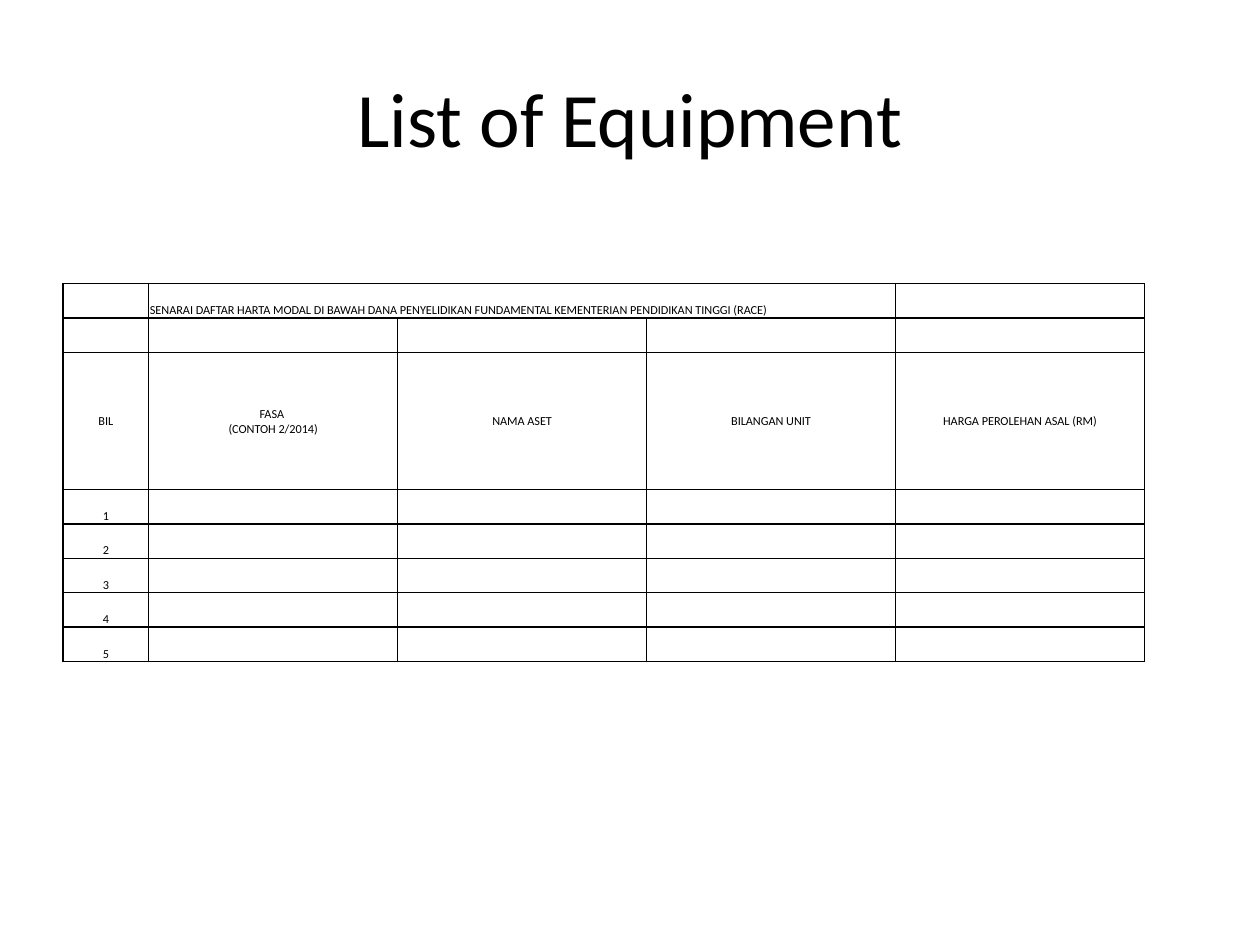
from lxml.etree import SubElement
from pptx import Presentation
from pptx.dml.color import RGBColor
from pptx.enum.text import MSO_ANCHOR, PP_ALIGN
from pptx.oxml.ns import qn
from pptx.util import Pt

BLACK = RGBColor(0, 0, 0)
LEFT, CENTER = PP_ALIGN.LEFT, PP_ALIGN.CENTER
MIDDLE, BOTTOM = MSO_ANCHOR.MIDDLE, MSO_ANCHOR.BOTTOM
FONT = "Calibri"

HEADING = ("SENARAI DAFTAR HARTA MODAL DI BAWAH DANA PENYELIDIKAN "
           "FUNDAMENTAL KEMENTERIAN PENDIDIKAN TINGGI (RACE)")
LABELS = ["BIL", "FASA \n(CONTOH 2/2014)", "NAMA ASET", "BILANGAN UNIT",
          "HARGA PEROLEHAN ASAL (RM)"]
ITEMS = 5


def write(frame, text, size=7, align=CENTER):
    para = frame.paragraphs[0]
    para.text = text.replace("\n", "\v")
    para.alignment = align
    for run in para.runs:
        run.font.name = FONT
        run.font.size = Pt(size)
        run.font.color.rgb = BLACK
    for gap in para._p.findall(qn("a:br")):
        SubElement(gap, qn("a:rPr"), sz=str(size * 100))
    SubElement(para._p, qn("a:endParaRPr"), sz=str(size * 100))


def outline(cell):
    props = cell._tc.get_or_add_tcPr()
    for side in ("lnL", "lnR", "lnT", "lnB"):
        line = SubElement(props, qn("a:" + side), w=str(Pt(1)))
        fill = SubElement(line, qn("a:solidFill"))
        SubElement(fill, qn("a:srgbClr"), val=str(BLACK))
    cell.fill.background()


def add_title(slide, left, top, width, height):
    box = slide.shapes.add_textbox(Pt(left), Pt(top), Pt(width), Pt(height))
    frame = box.text_frame
    frame.word_wrap = True
    frame.vertical_anchor = MIDDLE
    write(frame, "List of Equipment", size=44)


def add_list(slide, left, top, width, height):
    first, tall = 49, 78.45
    rows, cols = ITEMS + 3, len(LABELS)
    table = slide.shapes.add_table(rows, cols, Pt(left), Pt(top),
                                   Pt(width), Pt(height)).table
    table.first_row = table.horz_banding = False
    for i, col in enumerate(table.columns):
        col.width = Pt((width - first) / (cols - 1) if i else first)
    for i, row in enumerate(table.rows):
        row.height = Pt(tall if i == 2 else (height - tall) / (rows - 1))

    texts = {(0, 1): HEADING}
    texts.update({(2, i): label for i, label in enumerate(LABELS)})
    texts.update({(i + 2, 0): str(i) for i in range(1, ITEMS + 1)})
    for r in range(rows):
        for c in range(cols):
            cell = table.cell(r, c)
            cell.margin_left = cell.margin_right = cell.margin_top = Pt(0.7)
            cell.margin_bottom = Pt(0)
            cell.vertical_anchor = MIDDLE if r == 2 else BOTTOM
            outline(cell)
            write(cell.text_frame, texts.get((r, c), ""),
                  align=CENTER if r else LEFT)
    table.cell(0, 1).merge(table.cell(0, 3))


def main():
    deck = Presentation()
    deck.slide_width, deck.slide_height = Pt(720), Pt(540)
    slide = deck.slides.add_slide(deck.slide_layouts[6])
    add_title(slide, 36, 21.6, 648, 90)
    add_list(slide, 36, 162, 618, 216)
    deck.save("out.pptx")


if __name__ == "__main__":
    main()
